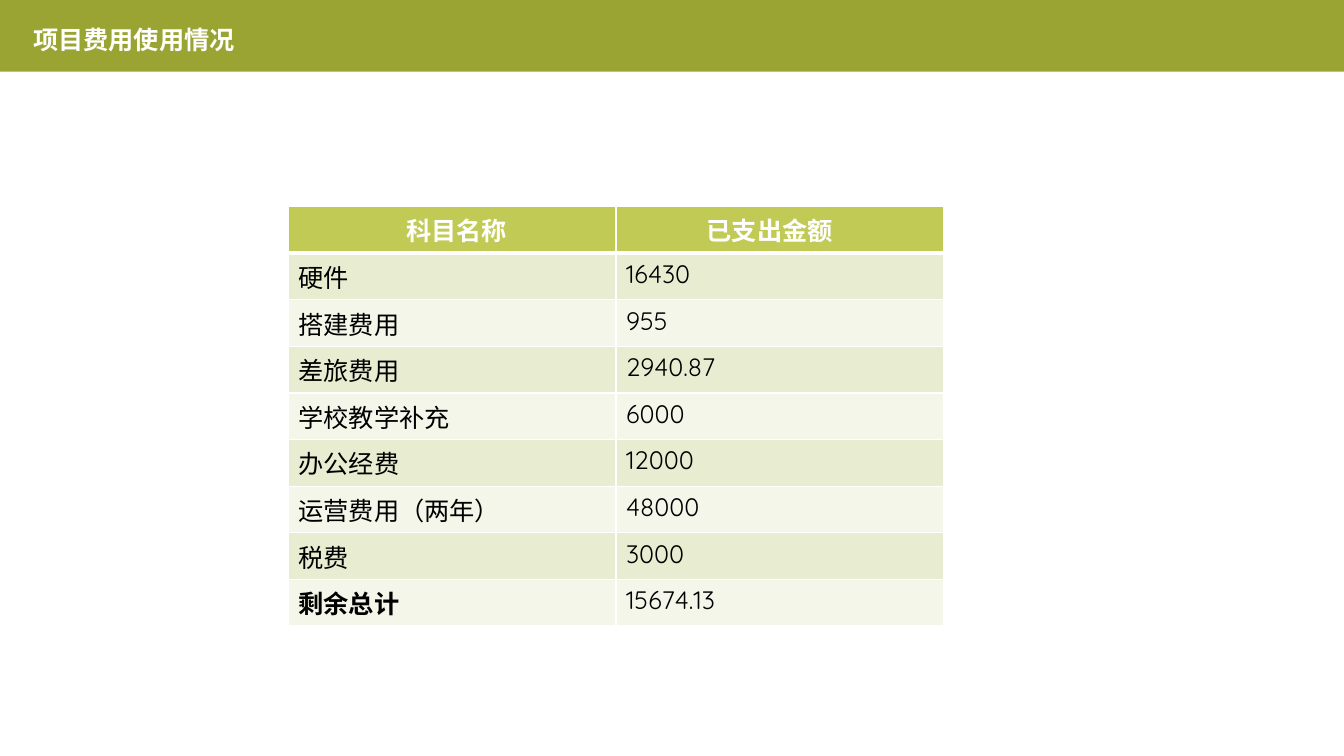
from lxml import etree
from pptx import Presentation
from pptx.dml.color import RGBColor
from pptx.enum.shapes import MSO_SHAPE
from pptx.enum.text import MSO_ANCHOR
from pptx.oxml.ns import qn
from pptx.util import Inches, Pt

LATIN_FONT, CHINESE_FONT = "Quicksand", "Noto Sans CJK SC"
WHITE, BLACK = "FFFFFF", "000000"
BANNER_FILL, HEADER_FILL = "9AA433", "C0CA54"
BAND_FILLS = ("E8ECD1", "F4F6E9")
HEADER_INDENTS = (1.17, 0.9)
EXPENSES = [
    ("科目名称", "已支出金额"),
    ("硬件", "16430"),
    ("搭建费用", "955"),
    ("差旅费用", "2940.87"),
    ("学校教学补充", "6000"),
    ("办公经费", "12000"),
    ("运营费用（两年）", "48000"),
    ("税费", "3000"),
    ("剩余总计", "15674.13"),
]


def set_fill(target, color):
    target.fill.solid()
    target.fill.fore_color.rgb = RGBColor.from_string(color)


def write(paragraph, text, color, bold):
    paragraph.text = text
    font = paragraph.font
    font.size, font.bold, font.name = Pt(18), bold, LATIN_FONT
    font.color.rgb = RGBColor.from_string(color)
    etree.SubElement(font._element, qn("a:ea"), typeface=CHINESE_FONT)


def set_borders(cell, bottom_width):
    """Draw white cell borders, one point wide except at the bottom."""
    properties = cell._tc.get_or_add_tcPr()
    widths = {"a:lnL": 1, "a:lnR": 1, "a:lnT": 1, "a:lnB": bottom_width}
    for tag, width in widths.items():
        line = etree.SubElement(properties, qn(tag), w=str(Pt(width)))
        fill = etree.SubElement(line, qn("a:solidFill"))
        etree.SubElement(fill, qn("a:srgbClr"), val=WHITE)


def add_banner(slide, title, width, height):
    banner = slide.shapes.add_shape(MSO_SHAPE.RECTANGLE, 0, 0, width, height)
    banner.shadow.inherit = False
    set_fill(banner, BANNER_FILL)
    banner.line.fill.background()

    box = slide.shapes.add_textbox(Inches(0.23), Inches(0.21), Inches(4.18), Inches(0.4))
    frame = box.text_frame
    frame.word_wrap = True
    frame.vertical_anchor = MSO_ANCHOR.MIDDLE
    paragraph = frame.paragraphs[0]
    paragraph.line_spacing = 0.9
    write(paragraph, title, WHITE, True)


def add_expense_table(slide, rows, left, top, width, height):
    table = slide.shapes.add_table(len(rows), len(rows[0]), left, top, width, height).table
    last = len(rows) - 1
    for row, values in enumerate(rows):
        is_header = row == 0
        for column, text in enumerate(values):
            cell = table.cell(row, column)
            bold = is_header or (row == last and column == 0)
            write(cell.text_frame.paragraphs[0], text, WHITE if is_header else BLACK, bold)
            if is_header:
                cell.margin_left = Inches(HEADER_INDENTS[column])
            set_borders(cell, 3 if is_header else 1)
            set_fill(cell, HEADER_FILL if is_header else BAND_FILLS[(row - 1) % 2])


def main():
    presentation = Presentation()
    presentation.slide_width, presentation.slide_height = Inches(13.33), Inches(7.5)
    slide = presentation.slides.add_slide(presentation.slide_layouts[6])
    add_banner(slide, "项目费用使用情况", presentation.slide_width, Inches(0.71))
    add_expense_table(slide, EXPENSES, Inches(2.86), Inches(2.05), Inches(6.5), Inches(4.16))
    presentation.save("out.pptx")


if __name__ == "__main__":
    main()
